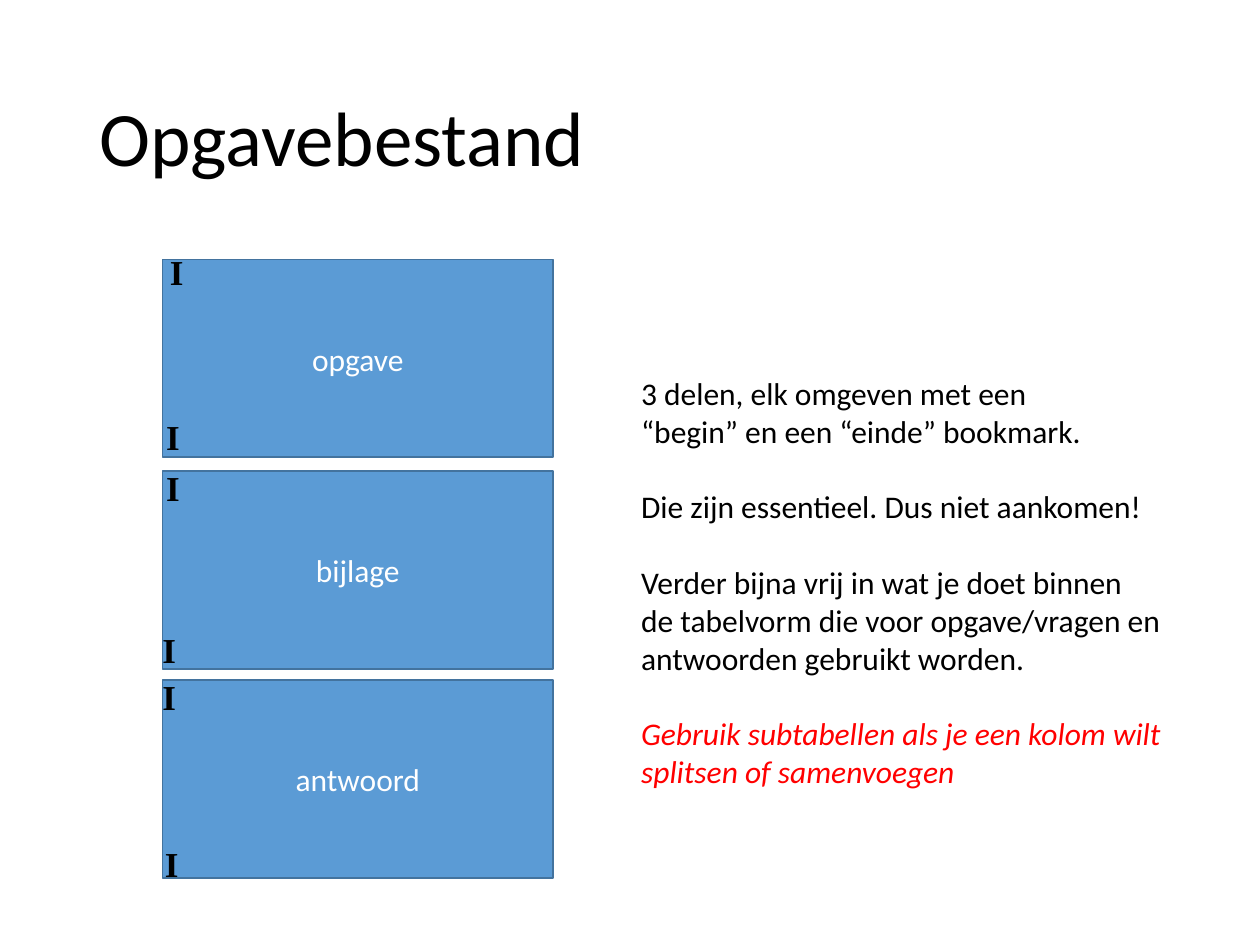
from pptx import Presentation
from pptx.dml.color import RGBColor
from pptx.enum.shapes import MSO_SHAPE
from pptx.enum.text import MSO_ANCHOR, MSO_AUTO_SIZE, PP_ALIGN
from pptx.util import Inches, Pt

RECTANGLE = MSO_SHAPE.RECTANGLE
MIDDLE = MSO_ANCHOR.MIDDLE
GROW = MSO_AUTO_SIZE.SHAPE_TO_FIT_TEXT
LEFT, CENTER = PP_ALIGN.LEFT, PP_ALIGN.CENTER

BLACK, WHITE, RED = "000000", "FFFFFF", "FF0000"
BOX_FILL, BOX_LINE = "5B9BD5", "43739E"
BODY_SIZE = 18
BLOCK_GAP = 21.6

PARTS = [
    ("opgave", 2.06, [(-0.04, -0.12), (-0.07, 1.19)]),
    ("bijlage", 3.74, [(-0.07, -0.09), (-0.1, 1.2)]),
    ("antwoord", 5.4, [(-0.1, -0.09), (-0.08, 1.24)]),
]
EXPLANATION = [
    ["3 delen, elk omgeven met een", "“begin” en een “einde” bookmark."],
    ["Die zijn essentieel. Dus niet aankomen!"],
    ["Verder bijna vrij in wat je doet binnen",
     "de tabelvorm die voor opgave/vragen en",
     "antwoorden gebruikt worden."],
]
WARNING = ["Gebruik subtabellen als je een kolom wilt", "splitsen of samenvoegen"]


def color(value):
    """Return the colour for a hex string."""
    return RGBColor.from_string(value)


def format_paragraph(paragraph, text, size, hex_color, font="Calibri", align=LEFT):
    """Fill a paragraph with text and set its font and alignment."""
    paragraph.text = text
    paragraph.alignment = align
    paragraph.font.name = font
    paragraph.font.size = Pt(size)
    paragraph.font.color.rgb = color(hex_color)


def add_text_box(slide, left, top, width, height):
    """Add a text box that grows with its unwrapped text; return its frame."""
    shape = slide.shapes.add_textbox(
        Inches(left), Inches(top), Inches(width), Inches(height))
    frame = shape.text_frame
    frame.word_wrap = False
    frame.auto_size = GROW
    return frame


def place_title(slide, left, top, width, height):
    """Position and format the title placeholder."""
    title = slide.shapes.title
    title.left, title.top = Inches(left), Inches(top)
    title.width, title.height = Inches(width), Inches(height)
    title.text_frame.vertical_anchor = MIDDLE
    paragraph = title.text_frame.paragraphs[0]
    format_paragraph(paragraph, "Opgavebestand", 44, BLACK)
    paragraph.line_spacing = 0.9


def add_part(slide, label, left, top, width, height):
    """Add the labelled rectangle for one part of the file."""
    shape = slide.shapes.add_shape(
        RECTANGLE, Inches(left), Inches(top), Inches(width), Inches(height))
    shape.shadow.inherit = False
    shape.fill.solid()
    shape.fill.fore_color.rgb = color(BOX_FILL)
    shape.line.color.rgb = color(BOX_LINE)
    shape.line.width = Pt(1)
    shape.text_frame.vertical_anchor = MIDDLE
    format_paragraph(shape.text_frame.paragraphs[0], label, BODY_SIZE, WHITE, align=CENTER)


def add_bookmark(slide, left, top):
    """Add one bookmark sign."""
    paragraph = add_text_box(slide, left, top, 0.31, 0.44).paragraphs[0]
    format_paragraph(paragraph, "I", 20, BLACK, "Times New Roman")
    paragraph.font.bold = True


def add_parts(slide, left, width, height):
    """Add the column of parts with a begin and an end bookmark on each."""
    for label, top, _ in PARTS:
        add_part(slide, label, left, top, width, height)
    for _, top, offsets in PARTS:
        for across, down in offsets:
            add_bookmark(slide, left + across, top + down)


def add_explanation(slide, left, top, width, height):
    """Add the explanation blocks followed by the red warning."""
    frame = add_text_box(slide, left, top, width, height)
    paragraph = None
    for block in EXPLANATION + [WARNING]:
        for index, line in enumerate(block):
            is_first = paragraph is None
            paragraph = frame.paragraphs[0] if is_first else frame.add_paragraph()
            is_warning = block is WARNING
            format_paragraph(paragraph, line, BODY_SIZE, RED if is_warning else BLACK)
            paragraph.font.italic = is_warning
            if index == 0 and not is_first:
                paragraph.space_before = Pt(BLOCK_GAP)


def main():
    """Build the slide and save the presentation."""
    presentation = Presentation()
    presentation.slide_width, presentation.slide_height = Inches(10), Inches(7.5)
    slide = presentation.slides.add_slide(presentation.slide_layouts.get_by_name("Title Only"))
    place_title(slide, 0.69, 0.4, 8.62, 1.45)
    add_parts(slide, 1.29, 3.1, 1.57)
    add_explanation(slide, 4.99, 2.92, 4.43, 3.43)
    presentation.save("out.pptx")


if __name__ == "__main__":
    main()
